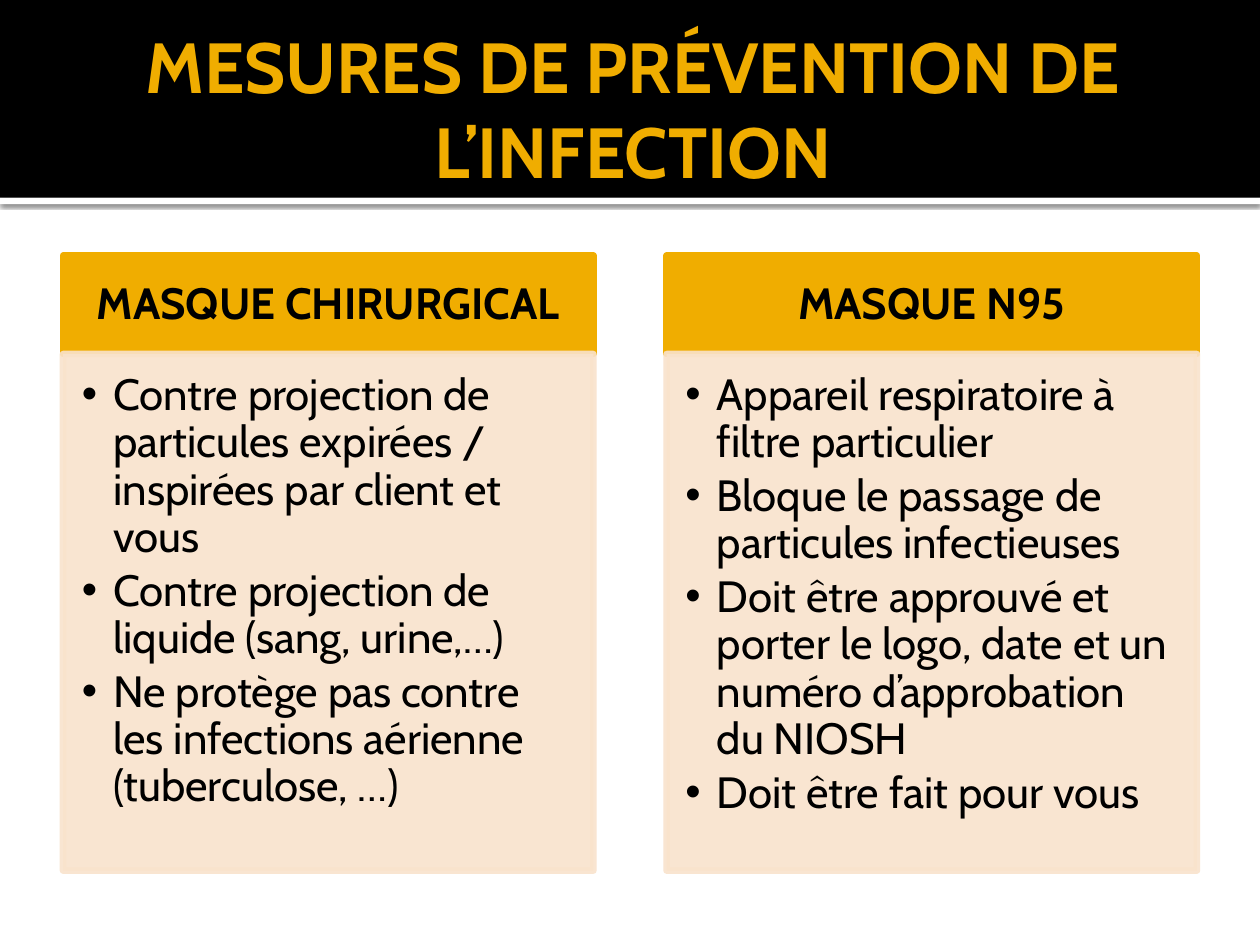
from pptx import Presentation
from pptx.dml.color import RGBColor
from pptx.enum.shapes import MSO_SHAPE
from pptx.enum.text import MSO_ANCHOR, MSO_AUTO_SIZE, PP_ALIGN
from pptx.oxml import parse_xml
from pptx.oxml.ns import nsdecls
from pptx.util import Inches, Pt

RECT = MSO_SHAPE.RECTANGLE
TOP, MIDDLE = MSO_ANCHOR.TOP, MSO_ANCHOR.MIDDLE
LEFT, CENTER = PP_ALIGN.LEFT, PP_ALIGN.CENTER
NO_FIT = MSO_AUTO_SIZE.NONE

FONT = "Cabin"
GOLD, CREAM, BLACK, WHITE = "F0AD00", "F9E3CC", "000000", "FFFFFF"
WIDTH, HEIGHT = 10, 7.5
MARGIN, COL_W = 0.5, 4.21
COL_STEP = WIDTH - 2 * MARGIN - COL_W
BAND_H, HEAD_TOP, HEAD_H, BODY_H = 1.57, 2.03, 0.78, 4.1

TITLE = "MESURES DE PRÉVENTION DE L’INFECTION"
MASKS = [
    ("MASQUE CHIRURGICAL", [
        "Contre projection de particules expirées / inspirées par client et vous",
        "Contre projection de liquide (sang, urine,…)",
        "Ne protège pas contre les infections aérienne (tuberculose, …)",
    ]),
    ("MASQUE N95", [
        "Appareil respiratoire à filtre particulier",
        "Bloque le passage de particules infectieuses",
        "Doit être approuvé et porter le logo, date et un numéro d’approbation du NIOSH",
        "Doit être fait pour vous",
    ]),
]


def rgb(color):
    """Turn a hex string into a colour."""
    return RGBColor.from_string(color)


def place(sp, left, top, width, height):
    """Set position and size in inches."""
    sp.left, sp.top = Inches(left), Inches(top)
    sp.width, sp.height = Inches(width), Inches(height)


def add_band(slide, top, height, color):
    """Add a full-width band."""
    sp = slide.shapes.add_shape(RECT, 0, Inches(top), Inches(WIDTH), Inches(height))
    sp.fill.solid()
    sp.fill.fore_color.rgb = rgb(color)
    sp.line.fill.background()
    sp.shadow.inherit = False
    return sp


def add_shadow(sp):
    """Give a shape a soft shadow below it."""
    effects = sp.element.spPr.find("{*}effectLst")
    effects.append(parse_xml(
        f'<a:outerShdw {nsdecls("a")} blurRad="{Pt(2.5)}" dist="{Pt(0.8)}" dir="5400000" rotWithShape="0">'
        f'<a:srgbClr val="{BLACK}"><a:alpha val="60000"/></a:srgbClr></a:outerShdw>'))


def paint(sp, color, opacity=100):
    """Fill and outline a box in one colour."""
    sp.fill.solid()
    sp.fill.fore_color.rgb = rgb(color)
    sp.line.width = Pt(3.78)
    sp.line.fill.solid()
    sp.line.color.rgb = rgb(color)
    for clr in sp.element.spPr.iter("{*}srgbClr"):
        clr.append(parse_xml(f'<a:alpha {nsdecls("a")} val="{opacity * 1000}"/>'))


def set_frame(sp, anchor, insets):
    """Set anchor and insets of a text frame and return it."""
    tf = sp.text_frame
    tf.word_wrap = True
    tf.auto_size = NO_FIT
    tf.vertical_anchor = anchor
    tf.margin_left, tf.margin_top, tf.margin_right, tf.margin_bottom = map(Inches, insets)
    return tf


def write(p, text, size, color, bold=False, align=LEFT, spacing=0.9, after=0):
    """Write one formatted run into a paragraph."""
    p.alignment = align
    p.line_spacing = spacing
    p.space_before, p.space_after = Pt(0), Pt(after)
    r = p.add_run()
    r.text = text
    r.font.name, r.font.size, r.font.bold = FONT, Pt(size), bold
    r.font.color.rgb = rgb(color)


def set_bullet(p):
    """Give a paragraph a hanging round bullet."""
    pPr = p._p.get_or_add_pPr()
    pPr.set("marL", str(Inches(0.25)))
    pPr.set("indent", str(-Inches(0.25)))
    pPr.append(parse_xml(f'<a:buChar {nsdecls("a")} char="•"/>'))


def fill_title(sp):
    """Place and write the slide title."""
    place(sp, MARGIN, 0.17, WIDTH - 2 * MARGIN, 1.37)
    tf = set_frame(sp, MIDDLE, (0.1, 0.05, 0.05, 0.05))
    write(tf.paragraphs[0], TITLE, 40.5, GOLD, True, CENTER, 1)


def fill_heading(sp, left, text):
    """Place and write a column heading."""
    place(sp, left, HEAD_TOP, COL_W, HEAD_H)
    paint(sp, GOLD)
    tf = set_frame(sp, MIDDLE, (0.19, 0.11, 0.19, 0.11))
    write(tf.paragraphs[0], text, 25, BLACK, True, CENTER)


def fill_list(sp, left, items):
    """Place and write a column's bullet list."""
    place(sp, left, HEAD_TOP + HEAD_H, COL_W, BODY_H)
    paint(sp, CREAM, 90)
    tf = set_frame(sp, TOP, (0.15, 0.15, 0.19, 0.22))
    for i, item in enumerate(items):
        p = tf.add_paragraph() if i else tf.paragraphs[0]
        write(p, item, 25, BLACK, after=3.75)
        set_bullet(p)


def main():
    """Build the slide."""
    prs = Presentation()
    prs.slide_width, prs.slide_height = Inches(WIDTH), Inches(HEIGHT)
    slide = prs.slides.add_slide(prs.slide_layouts.get_by_name("Comparison"))
    rule = add_band(slide, BAND_H, 0.05, WHITE)
    add_shadow(rule)
    band = add_band(slide, 0, BAND_H, BLACK)
    for sp in (band, rule):
        slide.shapes._spTree.insert(2, sp.element)
    fill_title(slide.shapes.title)
    for col, (heading, items) in enumerate(MASKS):
        left = MARGIN + col * COL_STEP
        fill_heading(slide.placeholders[1 + 2 * col], left, heading)
        fill_list(slide.placeholders[2 + 2 * col], left, items)
    prs.save("out.pptx")


if __name__ == "__main__":
    main()
